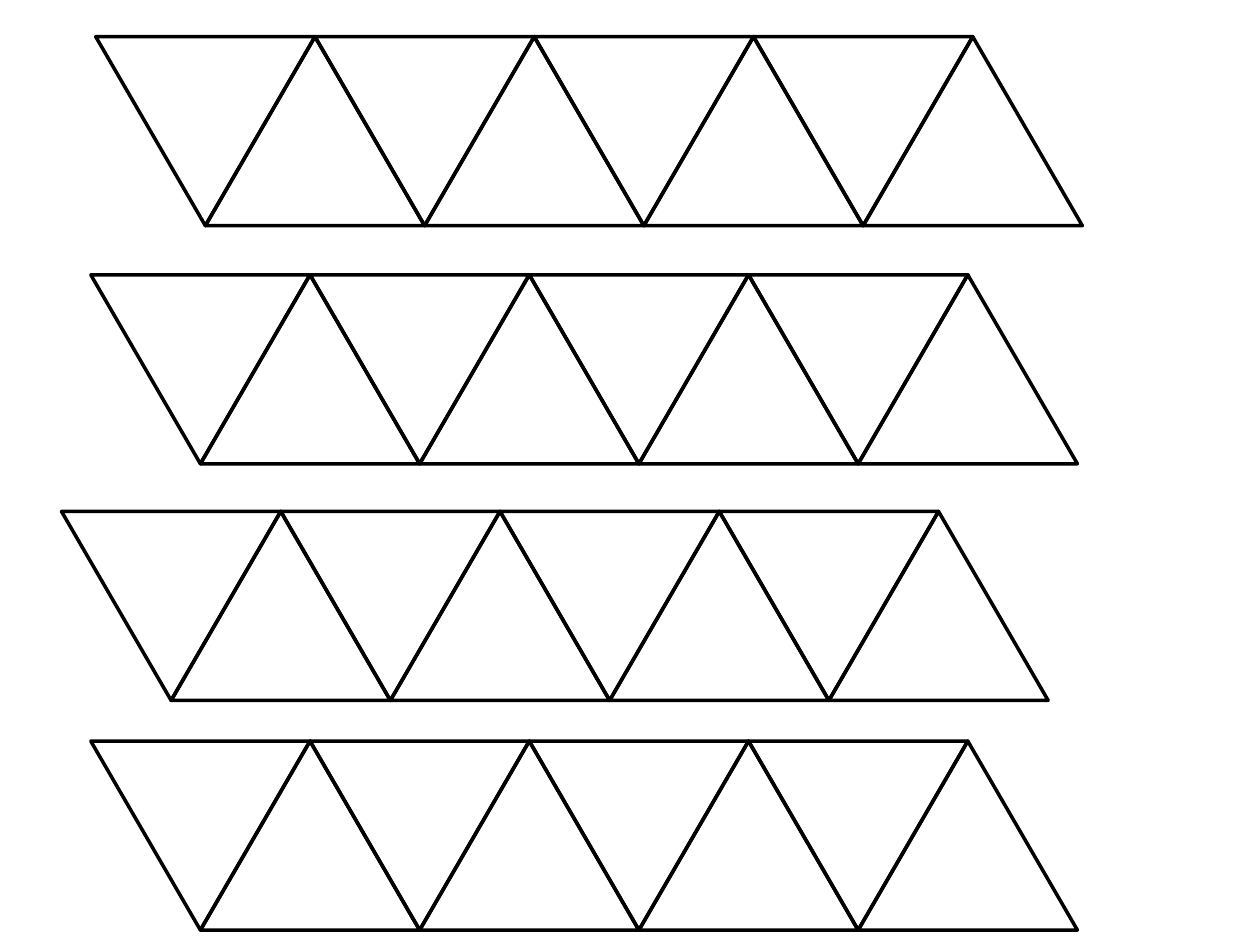
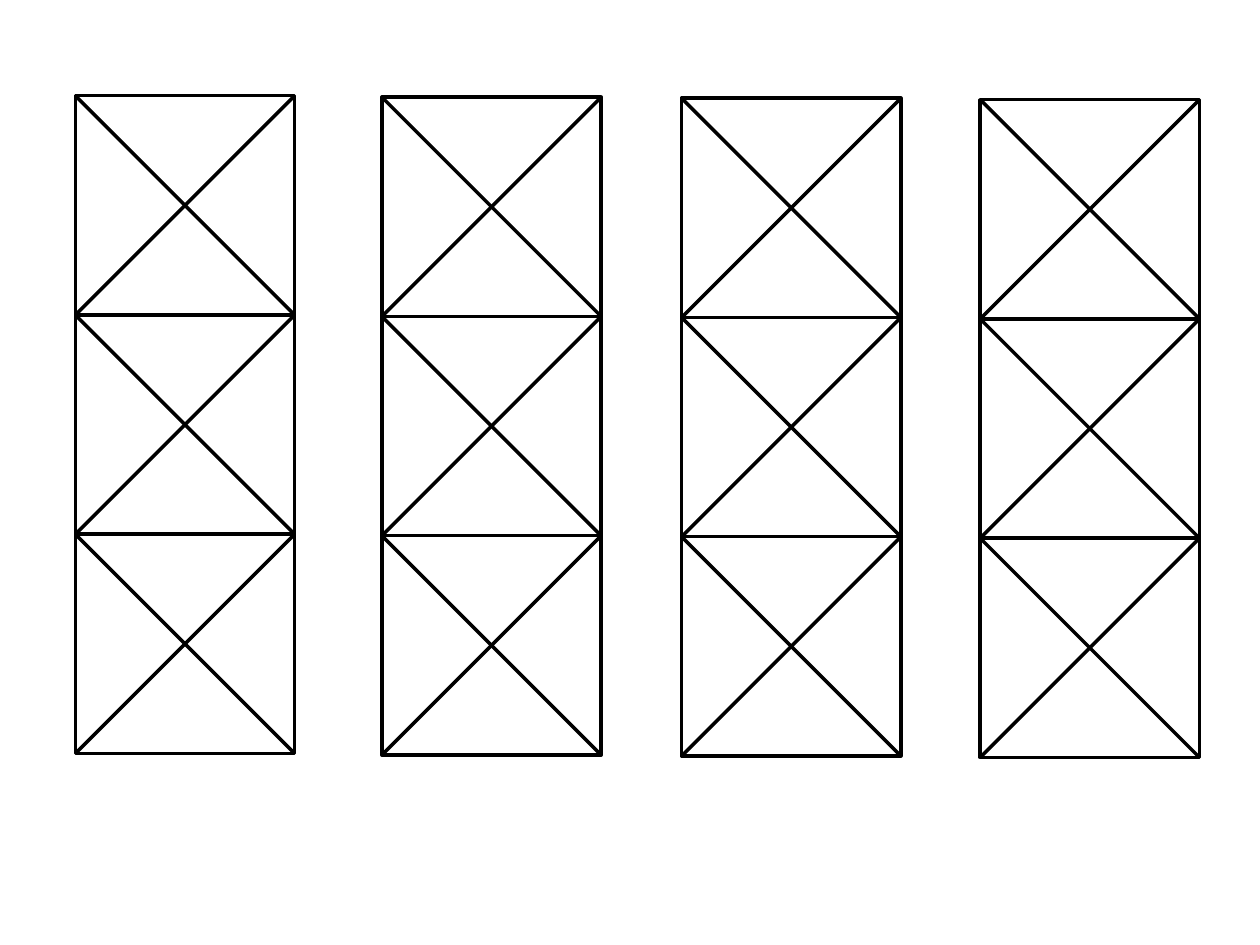
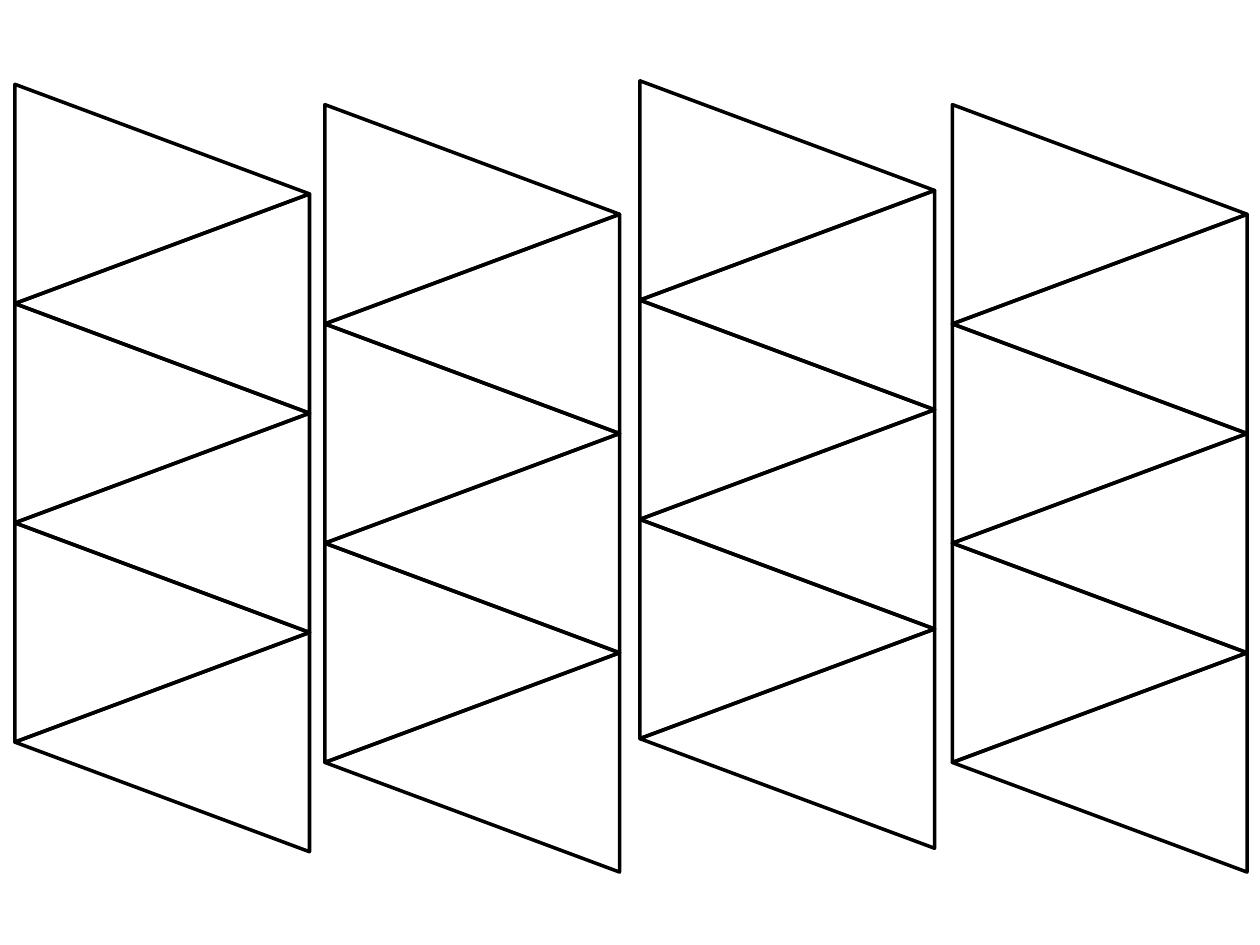
from lxml.etree import SubElement
from pptx import Presentation
from pptx.dml.color import RGBColor
from pptx.enum.shapes import MSO_CONNECTOR, MSO_SHAPE
from pptx.oxml.ns import qn
from pptx.util import Cm, Pt

COLORS = {"outline": "000000"}
LINE_WIDTH = Pt(2)

# Sizes and strip positions in centimetres
SIDE = 4.42
STEP = SIDE / 2
ROW_HEIGHT = 3.81
COLUMN_WIDTH = 5.94
TRIANGLE_ROWS = [(1.93, 0.74), (1.83, 5.54), (1.24, 10.31), (1.83, 14.94)]
SQUARE_COLUMNS = [(1.52, 1.93), (7.7, 1.96), (13.74, 1.98), (19.76, 2.01)]
TRIANGLE_COLUMNS = [(0.3, 1.7), (6.55, 2.11), (12.9, 1.63), (19.2, 2.11)]


def set_outline(sp):
    sp.line.color.rgb = RGBColor.from_string(COLORS["outline"])
    sp.line.width = LINE_WIDTH


def add_outline_shape(group, kind, x, y, width, height, rotation=0):
    sp = group.shapes.add_shape(kind, Cm(x), Cm(y), Cm(width), Cm(height))
    sp.rotation = rotation
    sp.shadow.inherit = False
    sp.fill.background()
    set_outline(sp)


def add_diagonal(group, x1, y1, x2, y2):
    line = group.shapes.add_connector(
        MSO_CONNECTOR.STRAIGHT, Cm(x1), Cm(y1), Cm(x2), Cm(y2))
    set_outline(line)
    SubElement(line._element.spPr, qn("a:effectLst"))


def add_triangle_row(group, x, y):
    """Eight triangles side by side, pointing down and up in turn."""
    for i in range(8):
        rotation = 0 if i % 2 else 180
        add_outline_shape(group, MSO_SHAPE.ISOSCELES_TRIANGLE,
                          x + i * STEP, y, SIDE, ROW_HEIGHT, rotation)


def add_square_column(group, x, y):
    """Three stacked squares, each crossed by its diagonals."""
    right = x + SIDE
    for i in range(3):
        top = y + i * SIDE
        bottom = top + SIDE
        add_outline_shape(group, MSO_SHAPE.RECTANGLE, x, top, SIDE, SIDE)
        add_diagonal(group, right, top, x, bottom)
        add_diagonal(group, right, bottom, x, top)


def add_triangle_column(group, x, y):
    """Six stacked triangles, pointing right and left in turn."""
    # A quarter turn swaps width and height about the centre
    inset = (COLUMN_WIDTH - SIDE) / 2
    for i in range(6):
        rotation = 270 if i % 2 else 90
        add_outline_shape(group, MSO_SHAPE.ISOSCELES_TRIANGLE,
                          x + inset, y + i * STEP - inset,
                          SIDE, COLUMN_WIDTH, rotation)


def add_strip_slide(prs, add_strip, positions):
    """One slide with a group for each strip."""
    slide = prs.slides.add_slide(prs.slide_layouts[6])
    for x, y in positions:
        add_strip(slide.shapes.add_group_shape(), x, y)


def main():
    prs = Presentation()
    prs.slide_width = Cm(25.4)
    prs.slide_height = Cm(19.05)
    add_strip_slide(prs, add_triangle_row, TRIANGLE_ROWS)
    add_strip_slide(prs, add_square_column, SQUARE_COLUMNS)
    add_strip_slide(prs, add_triangle_column, TRIANGLE_COLUMNS)
    prs.save("out.pptx")


if __name__ == "__main__":
    main()
